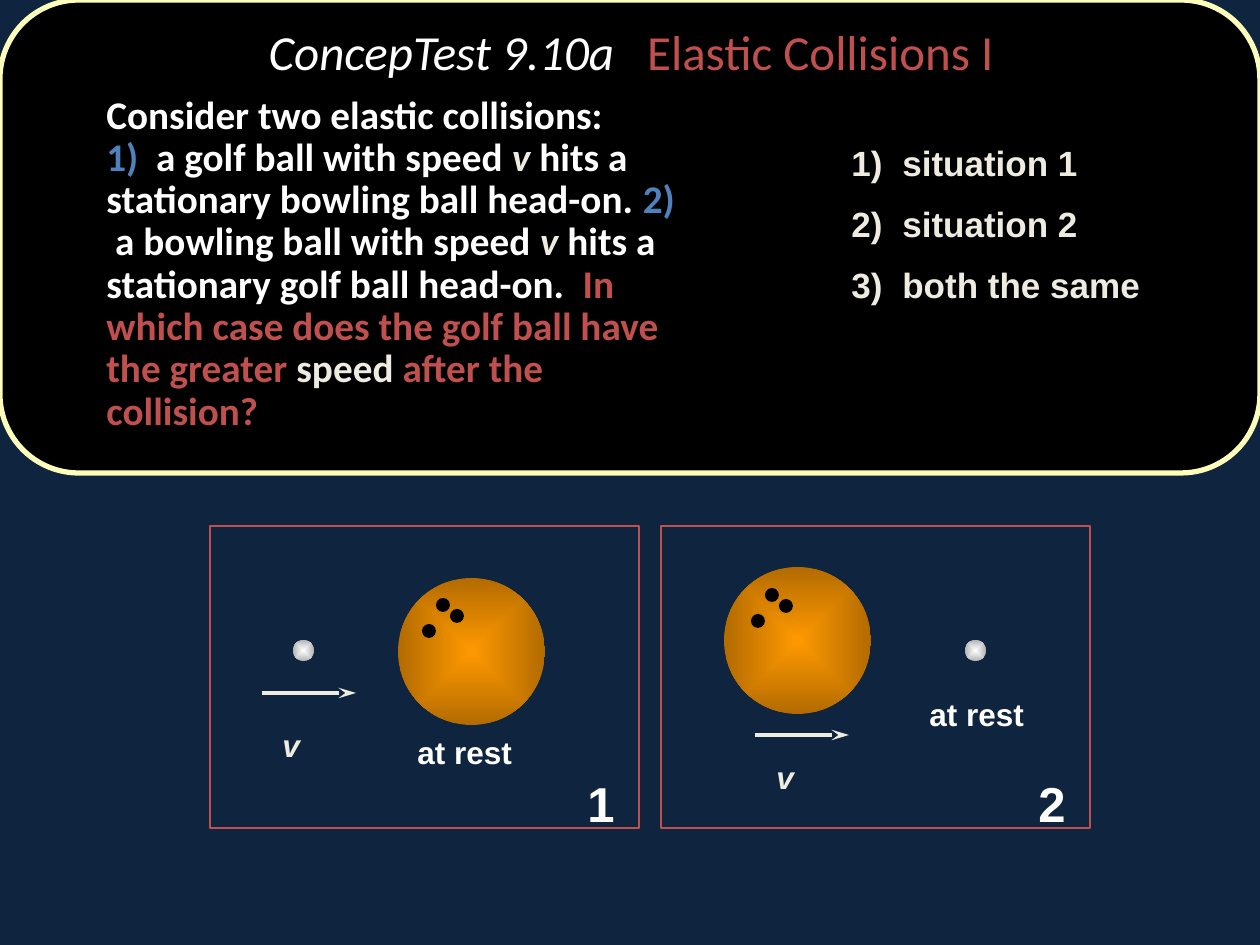
"""Build the ConcepTest slide on elastic collisions of a golf ball and a bowling ball."""
from lxml.etree import SubElement
from pptx import Presentation
from pptx.dml.color import RGBColor
from pptx.enum.shapes import MSO_CONNECTOR, MSO_SHAPE
from pptx.enum.text import MSO_ANCHOR, PP_ALIGN
from pptx.oxml.ns import qn
from pptx.util import Emu, Pt

PX = 914400 // 126
THEME = {
    "navy": RGBColor.from_string("0F243E"),
    "black": RGBColor.from_string("000000"),
    "white": RGBColor.from_string("FFFFFF"),
    "cream": RGBColor.from_string("EEECE1"),
    "yellow": RGBColor.from_string("FCFEB9"),
    "red": RGBColor.from_string("C0504D"),
    "blue": RGBColor.from_string("4F81BD"),
    "silver": RGBColor.from_string("B4B4B4"),
    "orange": RGBColor.from_string("FF9900"),
    "rust": RGBColor.from_string("B36B00"),
    "heading_font": "Calibri",
    "label_font": "Arial",
    "title_size": Pt(28),
    "question_size": Pt(22.4),
    "answer_size": Pt(20),
    "label_size": Pt(18),
}

presentation = Presentation()
presentation.slide_width = Emu(1260 * PX)
presentation.slide_height = Emu(945 * PX)
slide = presentation.slides.add_slide(presentation.slide_layouts[6])
slide.background.fill.solid()
slide.background.fill.fore_color.rgb = THEME["navy"]


def add_shape(kind, box, fills=(), line=None, width=1):
    shape = slide.shapes.add_shape(kind, *(Emu(value * PX) for value in box))
    shape.shadow.inherit = False
    if len(fills) == 2:
        shape.fill.gradient()
        for stop, color in zip(shape.fill.gradient_stops, fills):
            stop.color.rgb = THEME[color]
        gradient = shape._element.spPr.find(qn("a:gradFill"))
        gradient.remove(gradient.find(qn("a:lin")))
        center = SubElement(gradient, qn("a:path"), path="shape")
        SubElement(center, qn("a:fillToRect"), l="50000", t="50000", r="50000", b="50000")
    elif fills:
        shape.fill.solid()
        shape.fill.fore_color.rgb = THEME[fills[0]]
    else:
        shape.fill.background()
    if line:
        shape.line.color.rgb = THEME[line]
        shape.line.width = Pt(width)
    else:
        shape.line.fill.background()


def add_text(box, paragraphs, font, size, bold=True, spacing=1.0):
    shape = slide.shapes.add_textbox(*(Emu(value * PX) for value in box))
    frame = shape.text_frame
    frame.word_wrap = True
    for index, runs in enumerate(paragraphs):
        paragraph = frame.paragraphs[0] if index == 0 else frame.add_paragraph()
        paragraph.line_spacing = spacing
        paragraph.font.name = THEME[font]
        paragraph.font.size = THEME[size]
        paragraph.font.bold = bold
        for text, color, italic in runs:
            run = paragraph.add_run()
            run.text = text.rstrip("\n")
            run.font.color.rgb = THEME[color]
            run.font.italic = italic
            if text.endswith("\n"):
                paragraph.add_line_break()
    return frame


add_shape(MSO_SHAPE.ROUNDED_RECTANGLE, (0, 0, 1260, 473), ["black"], "yellow", 3)

title = add_text(
    (128, 0, 1006, 110),
    [[("ConcepTest 9.10a   ", "white", True), ("Elastic Collisions I", "red", False)]],
    "heading_font", "title_size", bold=False, spacing=0.9)
title.vertical_anchor = MSO_ANCHOR.MIDDLE
title.paragraphs[0].alignment = PP_ALIGN.CENTER

add_text(
    (94, 89, 600, 380),
    [[("Consider two elastic collisions:\n", "white", False),
      ("1)", "blue", False),
      ("  a golf ball with speed ", "white", False),
      ("v", "cream", True),
      (" hits a stationary bowling ball head-on. ", "white", False),
      ("2)", "blue", False),
      ("  a bowling ball with speed ", "white", False),
      ("v", "cream", True),
      (" hits a stationary golf ball head-on.  ", "white", False),
      ("In which case does the golf ball have the greater ", "red", False),
      ("speed", "cream", False),
      (" after the collision?", "red", False)]],
    "heading_font", "question_size", spacing=0.9)

answers = add_text(
    (839, 127, 392, 238),
    [[(f"{number})\t{answer}", "cream", False)]
     for number, answer in enumerate(("situation 1", "situation 2", "both the same"), 1)],
    "label_font", "answer_size", spacing=1.2)
for paragraph in answers.paragraphs:
    paragraph.space_after = Pt(6)
    properties = paragraph._p.get_or_add_pPr()
    properties.set("marL", str(51 * PX))
    properties.set("indent", str(-51 * PX))

situations = [
    {"number": "1", "panel": 210, "golf": (293, 640), "bowling": (398, 578), "holes": (422, 598),
     "arrow": (262, 693), "speed": (270, 720), "rest": (405, 727), "label": 575},
    {"number": "2", "panel": 661, "golf": (965, 640), "bowling": (724, 567), "holes": (751, 588),
     "arrow": (755, 735), "speed": (764, 752), "rest": (917, 689), "label": 1026},
]
for situation in situations:
    add_shape(MSO_SHAPE.RECTANGLE, (situation["panel"], 526, 429, 302), line="red")
    add_shape(MSO_SHAPE.OVAL, (*situation["golf"], 21, 21), ["white", "silver"])
    add_shape(MSO_SHAPE.OVAL, (*situation["bowling"], 147, 147), ["orange", "rust"])
    left, top = situation["holes"]
    for across, down in ((14, 0), (28, 11), (0, 26)):
        add_shape(MSO_SHAPE.OVAL, (left + across, top + down, 14, 14), ["black"])

    left, top = situation["arrow"]
    arrow = slide.shapes.add_connector(
        MSO_CONNECTOR.STRAIGHT, *(Emu(value * PX) for value in (left, top, left + 94, top)))
    arrow.line.color.rgb = THEME["cream"]
    arrow.line.width = Pt(2)
    SubElement(arrow.line._get_or_add_ln(), qn("a:tailEnd"), type="stealth", len="lg")
    SubElement(arrow._element.spPr, qn("a:effectLst"))

    add_text((*situation["speed"], 58, 58), [[("v", "cream", True)]], "label_font", "label_size")
    add_text((*situation["rest"], 151, 63), [[("at rest", "white", False)]],
             "label_font", "label_size")
    add_text((situation["label"], 774, 60, 65), [[(situation["number"], "white", False)]],
             "label_font", "title_size", spacing=0.9)

presentation.save("out.pptx")
